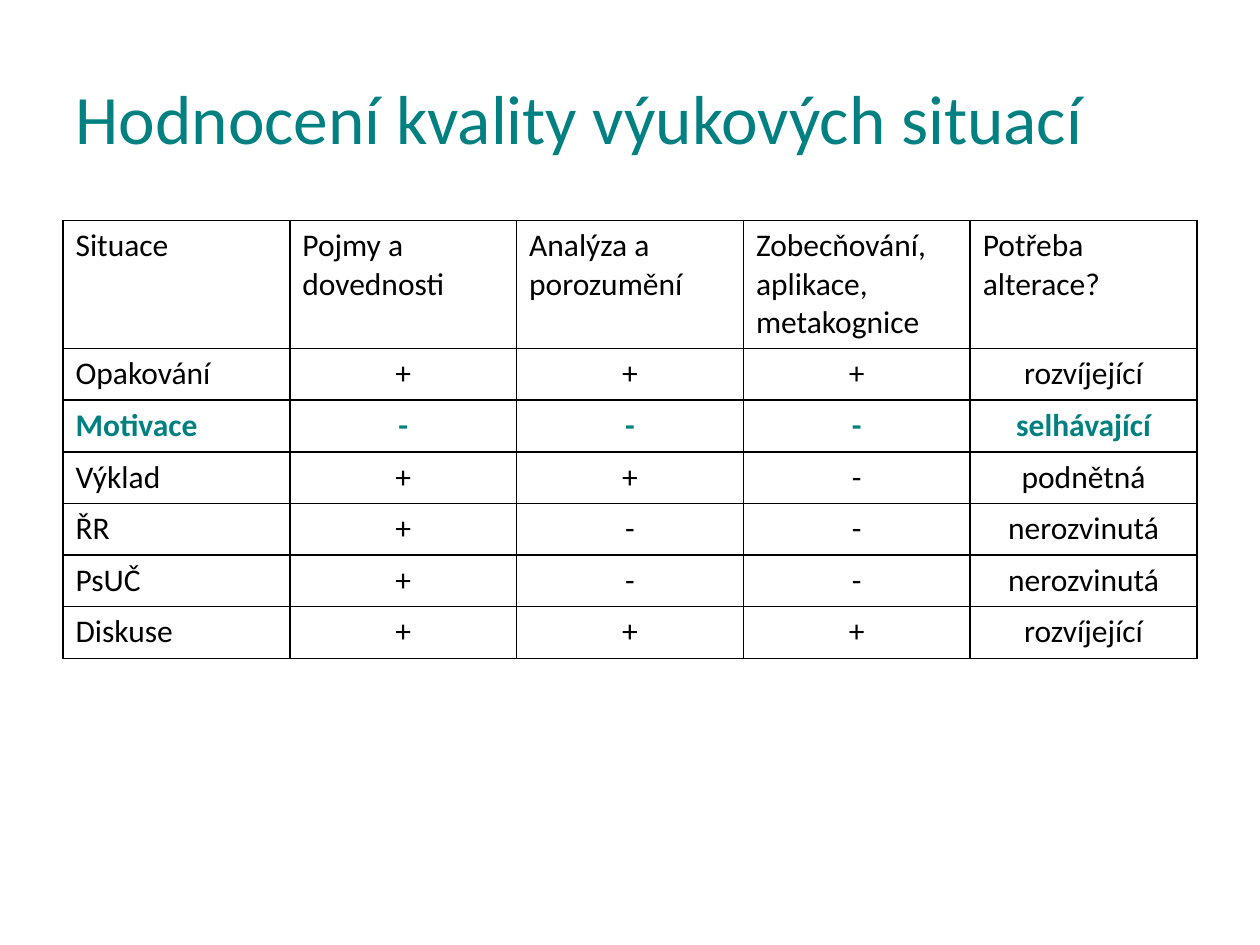
from lxml.etree import SubElement
from pptx import Presentation
from pptx.dml.color import RGBColor
from pptx.enum.text import MSO_ANCHOR as Anchor, PP_ALIGN as Align
from pptx.oxml.ns import qn
from pptx.util import Inches, Pt

TEAL = RGBColor(0x00, 0x80, 0x80)
BLACK = RGBColor(0x00, 0x00, 0x00)
WHITE = RGBColor(0xFF, 0xFF, 0xFF)

TITLE = "Hodnocení kvality výukových situací"
HEADER = ["Situace", "Pojmy a dovednosti", "Analýza a porozumění",
          "Zobecňování, aplikace, metakognice", "Potřeba alterace?"]
RATINGS = [
    ["Opakování", "+", "+", "+", "rozvíjející"],
    ["Motivace", "-", "-", "-", "selhávající"],
    ["Výklad", "+", "+", "-", "podnětná"],
    ["ŘR", "+", "-", "-", "nerozvinutá"],
    ["PsUČ", "+", "-", "-", "nerozvinutá"],
    ["Diskuse", "+", "+", "+", "rozvíjející"],
]
FAILING = "selhávající"


class Deck:
    FONT = "Calibri"
    COLS, ROWS = 20, 30

    def __init__(self, width, height):
        self.prs = Presentation()
        self.prs.slide_width = Inches(width)
        self.prs.slide_height = Inches(height)
        self.slide = self.prs.slides.add_slide(self.prs.slide_layouts[5])

    def box(self, col, row, cols, rows):
        x = self.prs.slide_width / self.COLS
        y = self.prs.slide_height / self.ROWS
        return [int(v) for v in (col * x, row * y, cols * x, rows * y)]

    def text(self, tf, text, align, color, **font):
        p = tf.paragraphs[0]
        p.alignment = align
        r = p.add_run()
        r.text = text
        for name, value in {"name": self.FONT, **font}.items():
            setattr(r.font, name, value)
        r.font.color.rgb = color

    def title(self, text, *place):
        sp = self.slide.shapes.title
        for name, value in zip(("left", "top", "width", "height"), self.box(*place)):
            setattr(sp, name, value)
        sp.text_frame.vertical_anchor = Anchor.MIDDLE
        self.text(sp.text_frame, text, Align.LEFT, TEAL, size=Pt(39.6))

    def border(self, cell):
        tc_pr = cell._tc.get_or_add_tcPr()
        for i, side in enumerate(("lnL", "lnR", "lnT", "lnB")):
            ln = SubElement(tc_pr, qn(f"a:{side}"), w=str(Pt(1)))
            fill = SubElement(ln, qn("a:solidFill"))
            SubElement(fill, qn("a:srgbClr"), val=str(BLACK))
            tc_pr.insert(i, ln)

    def table(self, rows, row_height, *place):
        left, top, width, height = self.box(*place)
        sp = self.slide.shapes.add_table(len(rows), len(rows[0]), left, top, width, height)
        table = sp.table
        table.first_row = table.horz_banding = False
        for i, values in enumerate(rows):
            table.rows[i].height = row_height
            failing = values[-1] == FAILING
            for j, text in enumerate(values):
                cell = table.cell(i, j)
                cell.fill.solid()
                cell.fill.fore_color.rgb = WHITE
                self.border(cell)
                self.text(cell.text_frame, text, Align.CENTER if i and j else Align.LEFT,
                          TEAL if failing else BLACK, size=Pt(18), bold=failing)
        sp.height = height


def main():
    deck = Deck(10, 7.5)
    deck.title(TITLE, 1, 1.2, 18, 5)
    deck.table([HEADER] + RATINGS, Inches(0.41), 1, 7, 18, 13.72)
    deck.prs.save("out.pptx")


if __name__ == "__main__":
    main()
